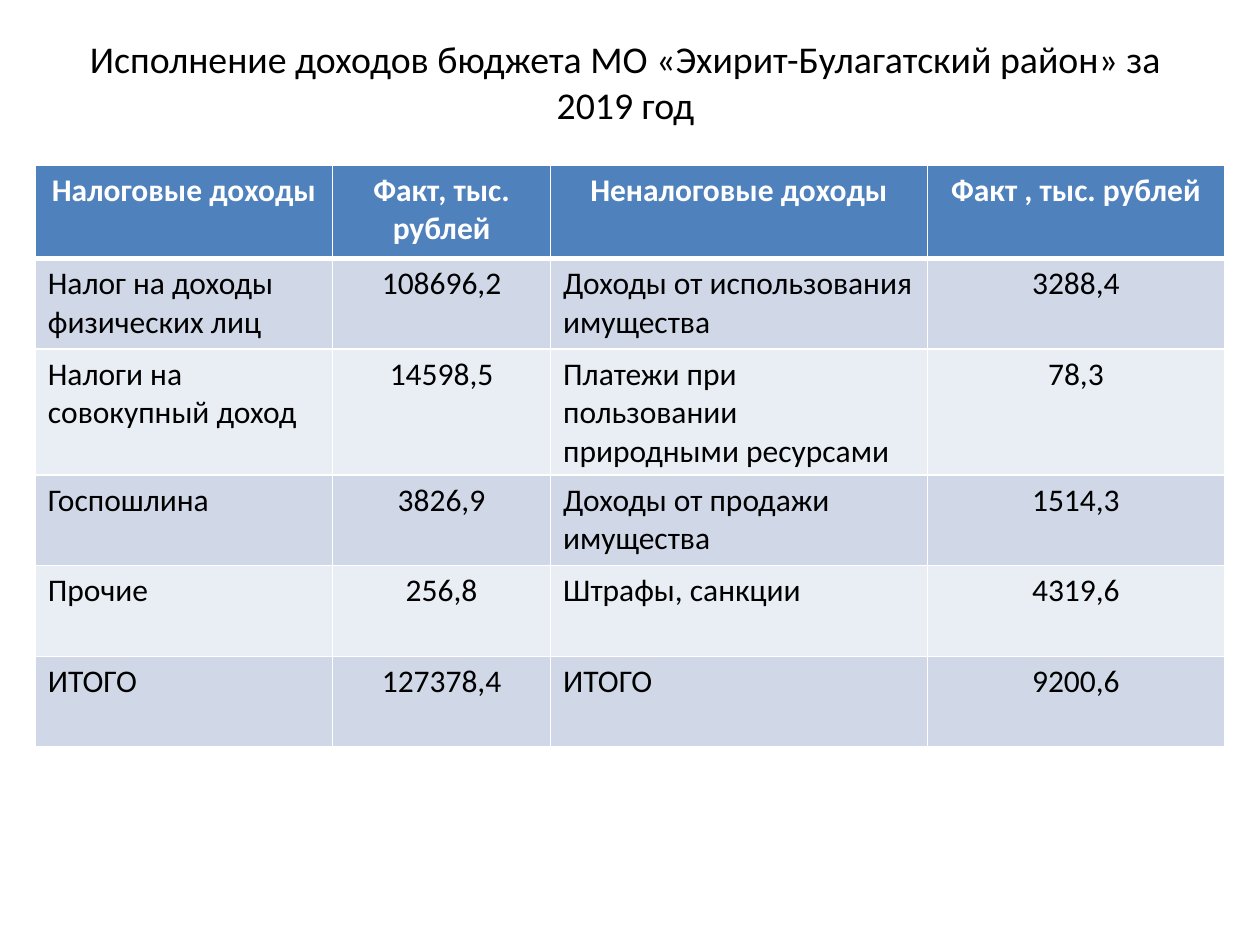
from lxml import etree
from pptx import Presentation
from pptx.dml.color import RGBColor
from pptx.enum.text import MSO_ANCHOR, PP_ALIGN
from pptx.oxml.ns import qn
from pptx.util import Inches, Pt

LEFT, CENTER = PP_ALIGN.LEFT, PP_ALIGN.CENTER
MIDDLE = MSO_ANCHOR.MIDDLE

COLORS = {
    "text": "000000",
    "white": "FFFFFF",
    "header": "4F81BD",
    "odd": "D0D8E8",
    "even": "E9EDF4",
}
TITLE = "Исполнение доходов бюджета МО «Эхирит-Булагатский район» за 2019 год"
ROWS = [
    ["Налоговые доходы", "Факт, тыс. рублей", "Неналоговые доходы", "Факт , тыс. рублей"],
    ["Налог на доходы физических лиц", "108696,2", "Доходы от использования имущества", "3288,4"],
    ["Налоги на совокупный доход", "14598,5", "Платежи при пользовании природными ресурсами", "78,3"],
    ["Госпошлина", "3826,9", "Доходы от продажи имущества", "1514,3"],
    ["Прочие", "256,8", "Штрафы, санкции", "4319,6"],
    ["ИТОГО", "127378,4", "ИТОГО", "9200,6"],
]
COL_WIDTHS = [2.36, 1.73, 2.99, 2.36]
ROW_HEIGHTS = [0.74] + [0.72] * (len(ROWS) - 1)


def write(tf, text, size=18, color="text", bold=False, align=LEFT):
    """Put one formatted paragraph into a text frame."""
    p = tf.paragraphs[0]
    p.alignment = align
    r = p.add_run()
    r.text = text
    r.font.name = "Calibri"
    r.font.size = Pt(size)
    r.font.bold = bold
    r.font.color.rgb = RGBColor.from_string(COLORS[color])


class SlideBuilder:
    """Hold the slide and its style, and add elements to it."""

    def __init__(self, slide, border="white"):
        self.s = slide
        self.border = border

    def title(self, text, left, top, width, height):
        """Add the centred slide title."""
        sp = self.s.shapes.add_textbox(*map(Inches, (left, top, width, height)))
        tf = sp.text_frame
        tf.word_wrap = True
        tf.vertical_anchor = MIDDLE
        write(tf, text, size=21.6, align=CENTER)

    def borders(self, cell, widths):
        """Draw the cell borders, given side by side in points."""
        tc_pr = cell._tc.get_or_add_tcPr()
        for side, width in widths.items():
            ln = etree.SubElement(tc_pr, qn(f"a:ln{side}"), w=str(Pt(width)))
            fill = etree.SubElement(ln, qn("a:solidFill"))
            etree.SubElement(fill, qn("a:srgbClr"), val=COLORS[self.border])

    def table(self, rows, left, top, col_widths, row_heights):
        """Add a banded table whose odd columns hold centred figures."""
        table = self.s.shapes.add_table(
            len(rows), len(col_widths), Inches(left), Inches(top),
            Inches(sum(col_widths)), Inches(sum(row_heights))).table
        for col, width in zip(table.columns, col_widths):
            col.width = Inches(width)
        for i, (row, height) in enumerate(zip(rows, row_heights)):
            table.rows[i].height = Inches(height)
            head = i == 0
            fill = "header" if head else "odd" if i % 2 else "even"
            for j, text in enumerate(row):
                cell = table.cell(i, j)
                self.borders(cell, {"L": 1, "R": 1, "T": 3 if i == 1 else 1, "B": 3 if head else 1})
                cell.fill.solid()
                cell.fill.fore_color.rgb = RGBColor.from_string(COLORS[fill])
                write(cell.text_frame, text, color="white" if head else "text",
                      bold=head, align=CENTER if head or j % 2 else LEFT)


def main():
    """Build the budget revenue slide."""
    prs = Presentation()
    prs.slide_width, prs.slide_height = Inches(10), Inches(7.5)
    builder = SlideBuilder(prs.slides.add_slide(prs.slide_layouts[6]))
    builder.title(TITLE, 0.43, 0.3, 9.07, 0.69)
    builder.table(ROWS, 0.28, 1.31, COL_WIDTHS, ROW_HEIGHTS)
    prs.save("out.pptx")


if __name__ == "__main__":
    main()
